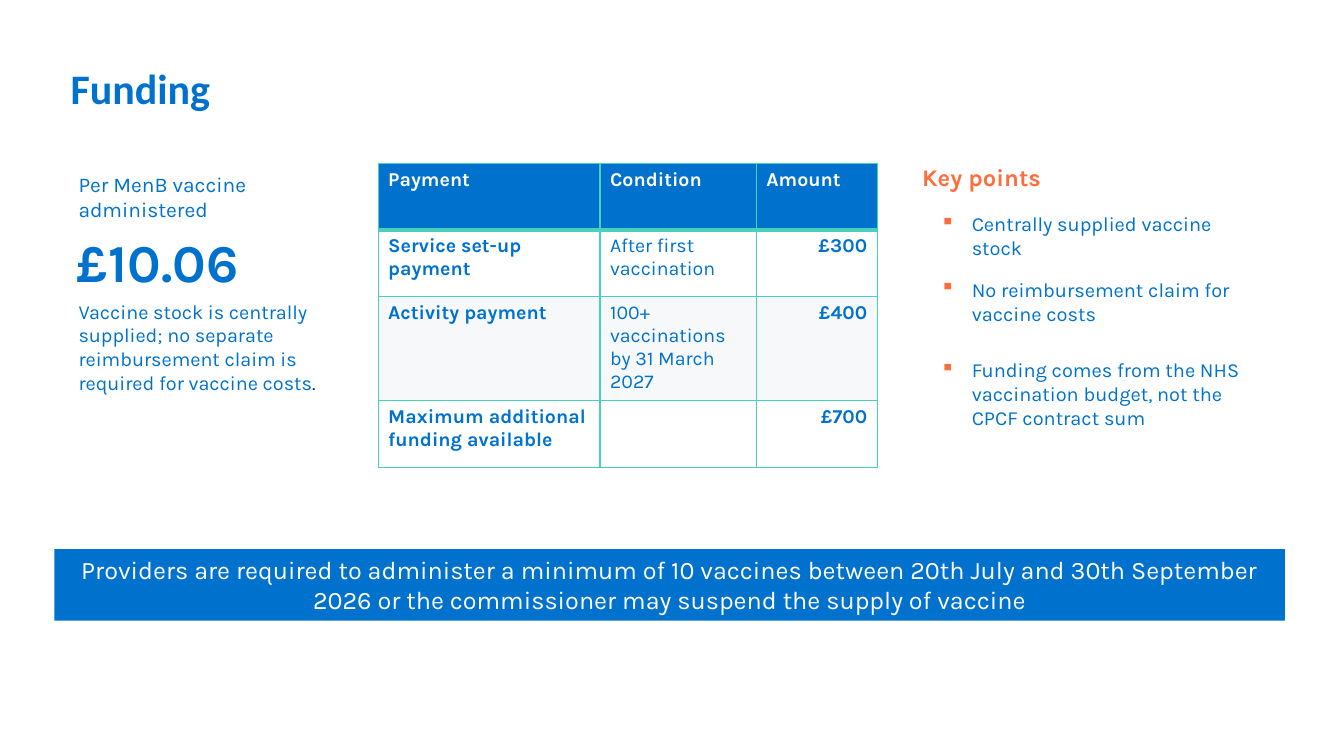
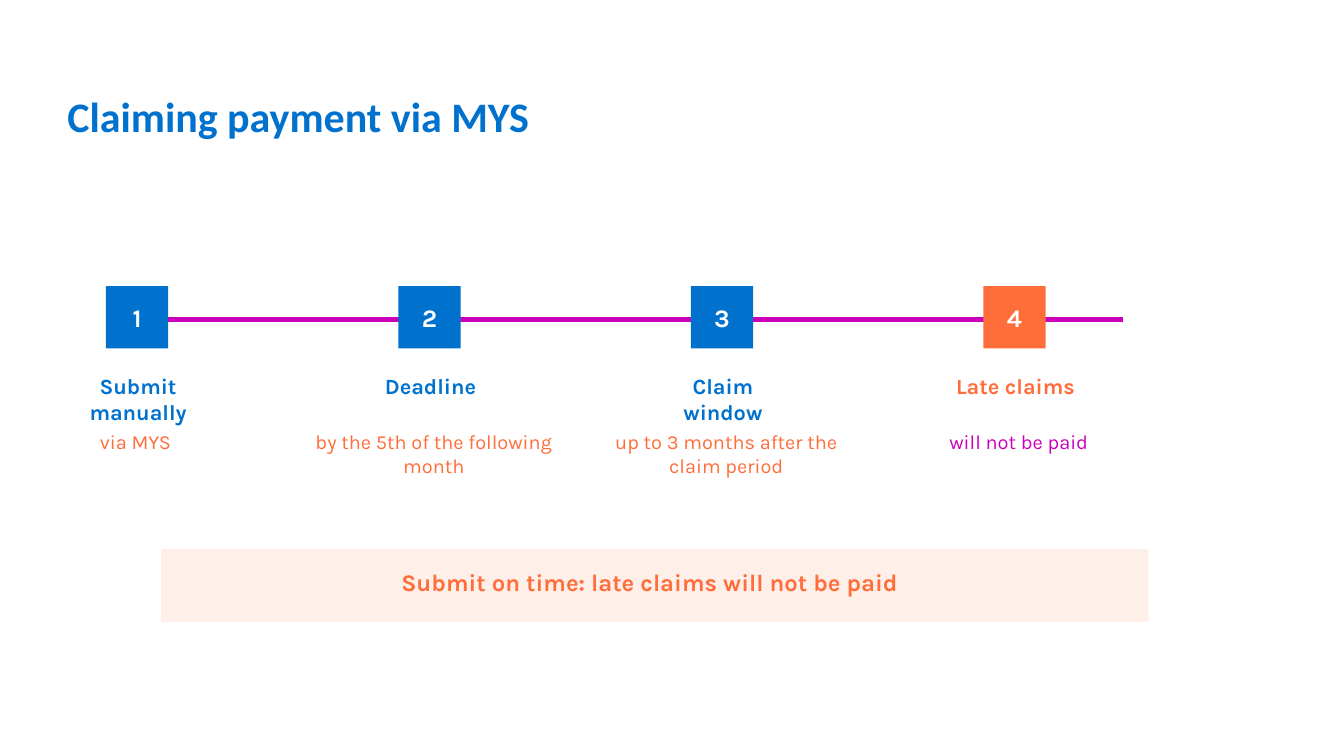
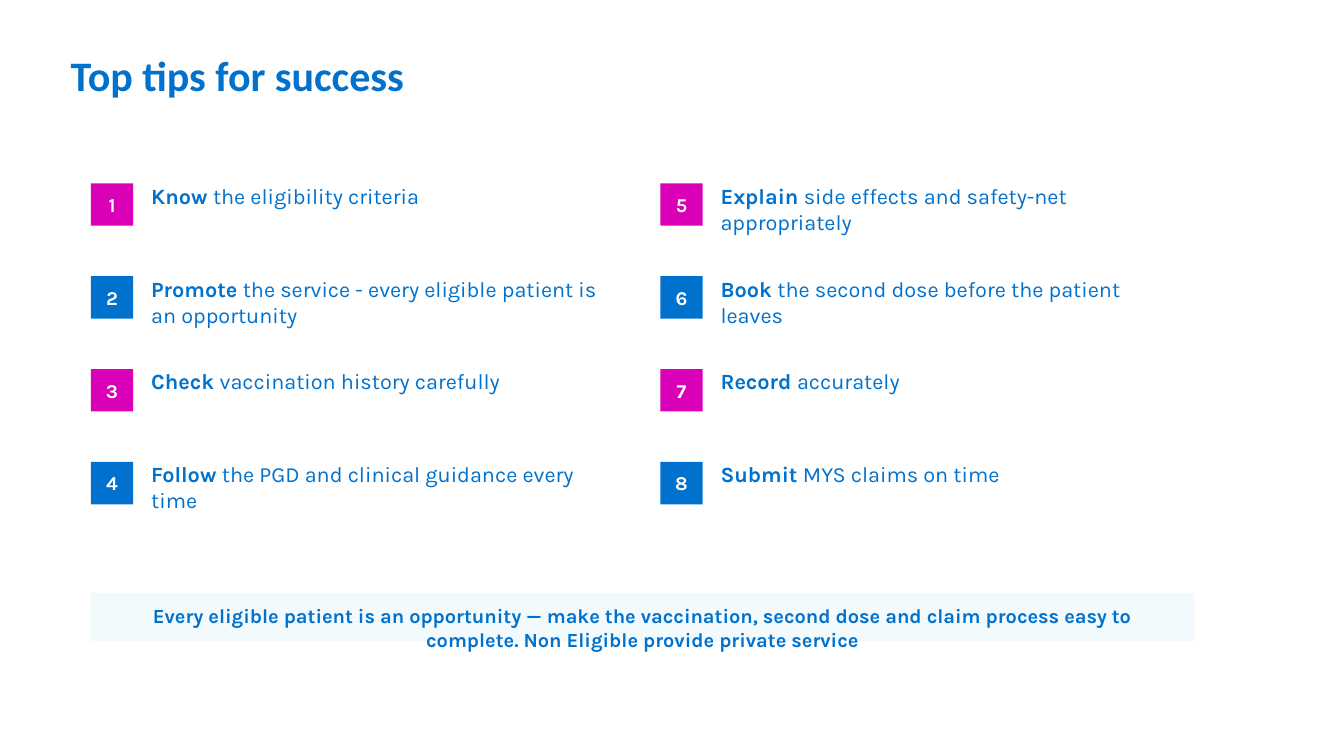
from lxml.etree import SubElement
from pptx import Presentation
from pptx.dml.color import RGBColor
from pptx.enum.shapes import MSO_CONNECTOR, MSO_SHAPE
from pptx.enum.text import MSO_ANCHOR, PP_ALIGN
from pptx.oxml import parse_xml
from pptx.oxml.ns import nsdecls, qn
from pptx.util import Cm, Pt

BLUE = RGBColor(0x00, 0x72, 0xCE)
NAVY = RGBColor(0x00, 0x3B, 0x5C)
ORANGE = RGBColor(0xFF, 0x6D, 0x3A)
PURPLE = RGBColor(0xCB, 0x00, 0xBA)
MAGENTA = RGBColor(0xD9, 0x00, 0xB8)
TEAL = RGBColor(0x48, 0xD1, 0xBA)
PEACH = RGBColor(0xFF, 0xEF, 0xE9)
ICE = RGBColor(0xF3, 0xFA, 0xFE)
PALE_GREY = RGBColor(0xF6, 0xF8, 0xFA)
WHITE = RGBColor(0xFF, 0xFF, 0xFF)

TITLE_FONT = "Calibri"
BODY_FONT = "Karla"

PAYMENTS = [
    ("Payment", "Condition", "Amount"),
    ("Service set-up payment", "After first vaccination", "£300"),
    ("Activity payment", "100+ vaccinations by 31 March 2027", "£400"),
    ("Maximum additional funding available", "", "£700"),
]
COLUMN_WIDTHS = (5.59, 3.94, 3.05)
ROW_FILLS = (BLUE, WHITE, PALE_GREY, WHITE)

KEY_POINTS = [
    ("Centrally supplied vaccine stock", 0),
    ("No reimbursement claim for vaccine costs", 12.5),
    ("Funding comes from the NHS vaccination budget, not the CPCF contract sum", 23.5),
]

CLAIM_STEPS = [
    ("Submit manually", "via MYS", 0.43, BLUE, ORANGE),
    ("Deadline", "by the 5th of the following month", 0.58, BLUE, ORANGE),
    ("Claim window", "up to 3 months after the claim period", 0.58, BLUE, ORANGE),
    ("Late claims", "will not be paid", 0.58, ORANGE, PURPLE),
]
STEP_PITCH = 7.37

TIPS = [
    ("Know", "the eligibility criteria"),
    ("Promote", "the service - every eligible patient is an opportunity"),
    ("Check", "vaccination history carefully"),
    ("Follow", "the PGD and clinical guidance every time"),
    ("Explain", "side effects and safety-net appropriately"),
    ("Book", "the second dose before the patient leaves"),
    ("Record", "accurately"),
    ("Submit", "MYS claims on time"),
]
TIPS_PER_COLUMN = 4
TIP_COLUMN_PITCH = 14.35
TIP_ROW_PITCH = 2.34


def style(paragraph, size, color, bold=False, align=PP_ALIGN.LEFT, font=BODY_FONT):
    paragraph.alignment = align
    paragraph.font.name = font
    paragraph.font.size = Pt(size)
    paragraph.font.bold = bold
    paragraph.font.color.rgb = color


def set_margins(frame, left=0, top=0, right=0, bottom=0):
    frame.margin_left, frame.margin_top = Cm(left), Cm(top)
    frame.margin_right, frame.margin_bottom = Cm(right), Cm(bottom)
    frame.word_wrap = True


def add_page(deck, title, left, top):
    page = deck.slides.add_slide(deck.slide_layouts[5])
    box = page.shapes.title
    box.left, box.top, box.width, box.height = Cm(left), Cm(top), Cm(22.6), Cm(1.4)
    box.text_frame.text = title
    box.text_frame.vertical_anchor = MSO_ANCHOR.TOP
    set_margins(box.text_frame)
    style(box.text_frame.paragraphs[0], 30, BLUE, True, font=TITLE_FONT)
    return page


def add_text(page, area, text, size, color, bold=False, align=PP_ALIGN.LEFT):
    box = page.shapes.add_textbox(*map(Cm, area))
    set_margins(box.text_frame)
    paragraph = box.text_frame.paragraphs[0]
    paragraph.text = text
    style(paragraph, size, color, bold, align)
    return paragraph


def add_block(page, area, fill, text, size, color, bold=True):
    block = page.shapes.add_shape(MSO_SHAPE.RECTANGLE, *map(Cm, area))
    block.shadow.inherit = False
    block.fill.solid()
    block.fill.fore_color.rgb = fill
    block.line.fill.background()
    block.text_frame.text = text
    style(block.text_frame.paragraphs[0], size, color, bold, PP_ALIGN.CENTER)
    return block


def add_number(page, left, top, side, fill, number, size):
    block = add_block(page, (left, top, side, side), fill, str(number), size, WHITE)
    set_margins(block.text_frame)
    block.text_frame.vertical_anchor = MSO_ANCHOR.MIDDLE


def add_banner(page, area, fill, text, size, color, margins, bold=True):
    banner = add_block(page, area, fill, text, size, color, bold)
    set_margins(banner.text_frame, *margins)
    banner.text_frame.vertical_anchor = MSO_ANCHOR.TOP


def set_borders(cell, top, bottom):
    properties = cell._tc.get_or_add_tcPr()
    widths = {"lnL": 1, "lnR": 1, "lnT": top, "lnB": bottom}
    for position, (side, width) in enumerate(widths.items()):
        properties.insert(position, parse_xml(
            f'<a:{side} {nsdecls("a")} w="{Pt(width)}"><a:solidFill>'
            f'<a:srgbClr val="{TEAL}"/></a:solidFill></a:{side}>'))


def add_payment_table(page):
    frame = page.shapes.add_table(
        len(PAYMENTS), len(COLUMN_WIDTHS), Cm(9.53), Cm(4.11),
        Cm(sum(COLUMN_WIDTHS)), Cm(1.68 * len(PAYMENTS)))
    table = frame.table
    table.first_row = table.horz_banding = False
    for column, width in zip(table.columns, COLUMN_WIDTHS):
        column.width = Cm(width)
    for row, values in enumerate(PAYMENTS):
        header = row == 0
        for column, value in enumerate(values):
            cell = table.cell(row, column)
            cell.text = value
            cell.fill.solid()
            cell.fill.fore_color.rgb = ROW_FILLS[row]
            set_borders(cell, 3 if row == 1 else 1, 3 if header else 1)
            align = PP_ALIGN.RIGHT if column == 2 and not header else PP_ALIGN.LEFT
            style(cell.text_frame.paragraphs[0], 14, WHITE if header else BLUE,
                  header or column != 1, align)


def add_bullet(paragraph, indent):
    properties = paragraph._p.get_or_add_pPr()
    properties.set("marL", str(Cm(indent)))
    properties.set("indent", str(-Cm(indent)))
    color = SubElement(properties, qn("a:buClr"))
    SubElement(color, qn("a:srgbClr"), val=str(ORANGE))
    SubElement(properties, qn("a:buChar"), char="▪")


def add_key_points(page):
    add_text(page, (23.24, 4.11, 7.11, 0.76), "Key points", 17, ORANGE, True)
    box = page.shapes.add_textbox(Cm(23.7), Cm(5.33), Cm(8.05), Cm(5.59))
    frame = box.text_frame
    set_margins(frame)
    for index, (text, gap) in enumerate(KEY_POINTS):
        paragraph = frame.add_paragraph() if index else frame.paragraphs[0]
        paragraph.text = text
        paragraph.space_before = Pt(gap)
        add_bullet(paragraph, 0.79)
        style(paragraph, 14.3, BLUE)


def build_funding(deck):
    page = add_page(deck, "Funding", 1.78, 1.57)
    add_text(page, (1.98, 4.32, 6.86, 0.89), "Per MenB vaccine administered", 15, BLUE)
    add_text(page, (1.93, 5.79, 6.86, 1.57), "£10.06", 38, BLUE, True)
    supply = add_text(
        page, (1.98, 7.54, 6.73, 2.4),
        "Vaccine stock is centrally supplied; no separate reimbursement claim "
        "is required for vaccine costs", 14.2, BLUE)
    span = supply.add_run()
    span.text = "."
    span.font.color.rgb = NAVY
    add_payment_table(page)
    add_key_points(page)
    add_banner(
        page, (1.37, 13.84, 31.01, 1.8), BLUE,
        "Providers are required to administer a minimum of 10 vaccines between 20th July "
        "and 30th September 2026 or the commissioner may suspend the supply of vaccine",
        18, WHITE, (0.25, 0.13, 0.25, 0.13), bold=False)


def build_claiming(deck):
    page = add_page(deck, "Claiming payment via MYS", 1.7, 2.29)
    track = page.shapes.add_connector(
        MSO_CONNECTOR.STRAIGHT, Cm(3.4), Cm(8.06), Cm(28.3), Cm(8.06))
    track.line.color.rgb = PURPLE
    track.line.width = Cm(0.13)
    SubElement(track._element.spPr, qn("a:effectLst"))
    for index, (heading, detail, detail_left, color, detail_color) in enumerate(CLAIM_STEPS):
        shift = index * STEP_PITCH
        add_number(page, 2.67 + shift, 7.21, 1.57, color, index + 1, 18)
        add_text(page, (1.7 + shift, 9.4, 3.56, 0.71), heading, 15.5, color, True,
                 PP_ALIGN.CENTER)
        add_text(page, (detail_left + shift, 10.82, 5.97, 1.78), detail, 14.3,
                 detail_color, align=PP_ALIGN.CENTER)
    add_banner(page, (4.06, 13.84, 24.89, 1.83), PEACH,
               "Submit on time: late claims will not be paid", 17, ORANGE,
               (0.76, 0.46, 1.02, 0))


def build_tips(deck):
    page = add_page(deck, "Top tips for success", 1.78, 1.24)
    for index, (verb, rest) in enumerate(TIPS):
        column, row = divmod(index, TIPS_PER_COLUMN)
        left = 2.29 + column * TIP_COLUMN_PITCH
        top = 4.62 + row * TIP_ROW_PITCH
        add_number(page, left, top, 1.07, BLUE if row % 2 else MAGENTA, index + 1, 14)
        tip = add_text(page, (left + 1.52, top - 0.02, 11.68, 1.32), verb + " ", 15.5, BLUE)
        tip.runs[0].font.bold = True
        tip.add_run().text = rest
    add_banner(
        page, (2.29, 14.94, 27.81, 1.22), ICE,
        "Every eligible patient is an opportunity — make the vaccination, second dose and "
        "claim process easy to complete. Non Eligible provide private service",
        14.3, BLUE, (0.64, 0.28, 0.64, 0))


def main():
    deck = Presentation()
    deck.slide_width, deck.slide_height = Cm(33.87), Cm(19.05)
    build_funding(deck)
    build_claiming(deck)
    build_tips(deck)
    deck.save("out.pptx")


if __name__ == "__main__":
    main()
